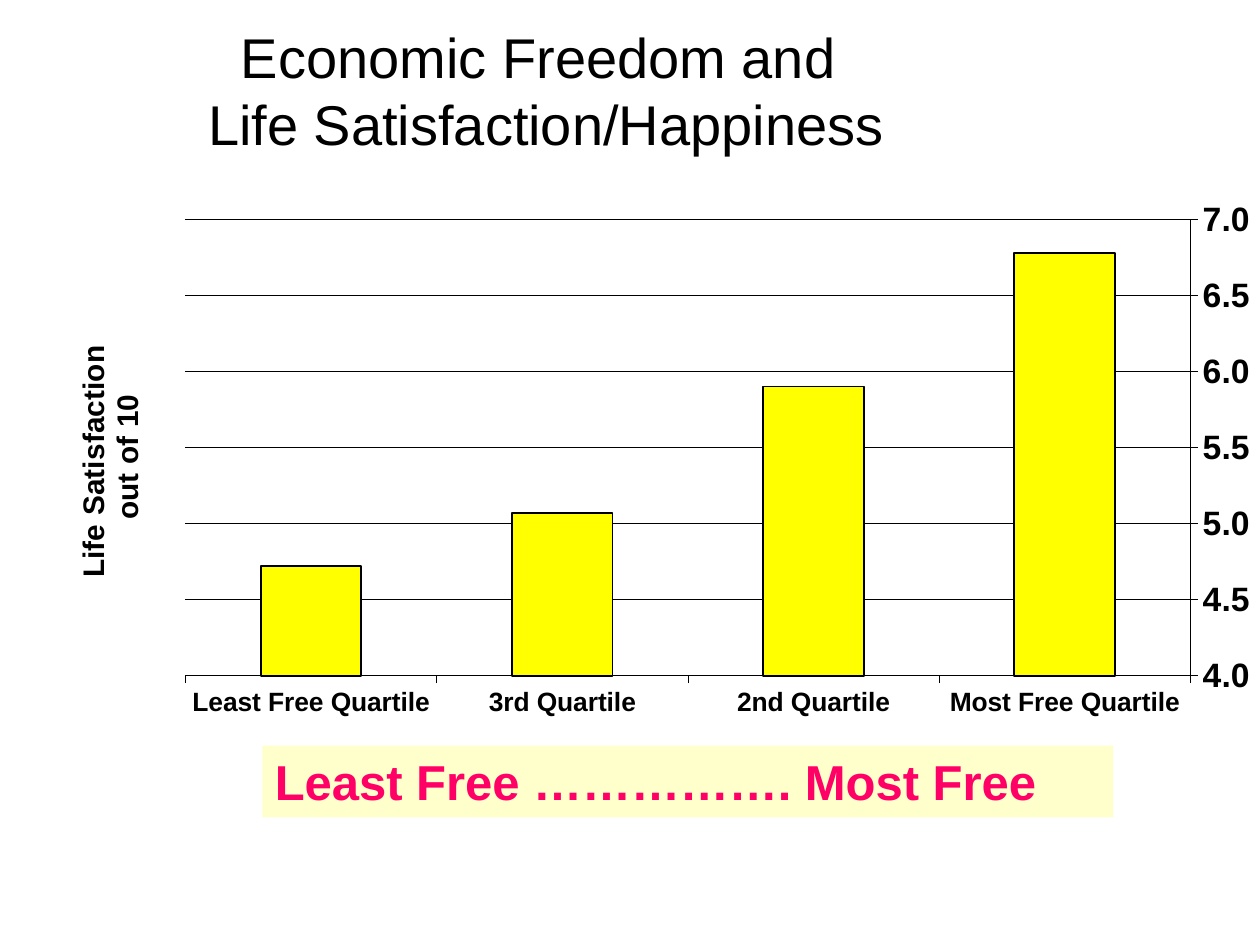
from lxml.etree import SubElement
from pptx import Presentation
from pptx.chart.data import CategoryChartData
from pptx.dml.color import RGBColor
from pptx.enum.chart import XL_CHART_TYPE, XL_TICK_LABEL_POSITION, XL_TICK_MARK
from pptx.enum.shapes import MSO_SHAPE
from pptx.enum.text import MSO_ANCHOR, PP_ALIGN
from pptx.oxml.ns import qn
from pptx.util import Cm, Pt

SATISFACTION = {
    "Most Free Quartile": 6.78,
    "2nd Quartile": 5.9,
    "3rd Quartile": 5.07,
    "Least Free Quartile": 4.72,
}


def color(value):
    return RGBColor.from_string(value)


def set_values(target, values):
    for name, value in values.items():
        setattr(target, name, value)


def style_font(font, size, bold=True, fill="000000"):
    set_values(font, {"name": "Arial", "size": Pt(size), "bold": bold})
    font.color.rgb = color(fill)


def style_line(line, width):
    line.color.rgb = color("000000")
    line.width = Pt(width)


def set_layout(parent, **values):
    layout = parent.find(qn("c:layout"))
    if layout is None:
        layout = parent.makeelement(qn("c:layout"))
        anchor = parent.find(qn("c:tx"))
        if anchor is None:
            parent.insert(0, layout)
        else:
            anchor.addnext(layout)
    for child in list(layout):
        layout.remove(child)
    manual = SubElement(layout, qn("c:manualLayout"))
    for tag, value in values.items():
        SubElement(manual, qn(f"c:{tag}")).set("val", str(value))


def add_title(slide, left, top, width, height):
    box = slide.shapes.add_textbox(Cm(left), Cm(top), Cm(width), Cm(height))
    frame = box.text_frame
    set_values(frame, {"word_wrap": True, "vertical_anchor": MSO_ANCHOR.MIDDLE})
    paragraph = frame.paragraphs[0]
    paragraph.text = "Economic Freedom and \vLife Satisfaction/Happiness"
    paragraph.alignment = PP_ALIGN.CENTER
    style_font(paragraph.font, 32, bold=False)


def add_value_title(axis):
    frame = axis.axis_title.text_frame
    frame.text = "Life Satisfaction \vout of 10"
    paragraph = frame.paragraphs[0]
    paragraph.alignment = PP_ALIGN.CENTER
    style_font(paragraph.font, 17)
    for run in paragraph.runs:
        style_font(run.font, 17)
    body = frame.paragraphs[0]._p.getparent().find(qn("a:bodyPr"))
    body.set("rot", "-5400000")
    body.set("vert", "horz")
    set_layout(axis.axis_title._element, xMode="edge", yMode="edge", x=0.04, y=0.2)


def add_satisfaction_chart(slide, left, top, width, height):
    data = CategoryChartData(number_format="0.0")
    data.categories = list(SATISFACTION)
    data.add_series("Series 1", list(SATISFACTION.values()))
    chart = slide.shapes.add_chart(
        XL_CHART_TYPE.COLUMN_CLUSTERED, Cm(left), Cm(top), Cm(width), Cm(height), data
    ).chart
    set_values(chart, {"has_legend": False, "has_title": False})
    style_font(chart.font, 19)

    plot = chart.plots[0]
    set_values(plot, {"gap_width": 150, "vary_by_categories": False})
    bars = plot.series[0].format
    bars.fill.solid()
    bars.fill.fore_color.rgb = color("FFFF00")
    style_line(bars.line, 1.06)

    for axis, size in ((chart.category_axis, 15.1), (chart.value_axis, 19.3)):
        axis.major_tick_mark = XL_TICK_MARK.OUTSIDE
        style_line(axis.format.line, 0.25)
        style_font(axis.tick_labels.font, size)
    set_values(chart.category_axis, {
        "reverse_order": True,
        "tick_label_position": XL_TICK_LABEL_POSITION.LOW,
    })
    value_axis = chart.value_axis
    set_values(value_axis, {
        "minimum_scale": 4,
        "maximum_scale": 7,
        "major_unit": 0.5,
        "has_major_gridlines": True,
    })
    set_values(value_axis.tick_labels, {
        "number_format": "0.0",
        "number_format_is_linked": False,
    })
    style_line(value_axis.major_gridlines.format.line, 0.25)
    add_value_title(value_axis)
    plot_area = chart._chartSpace.find(qn("c:chart")).find(qn("c:plotArea"))
    set_layout(plot_area, layoutTarget="inner", xMode="edge", yMode="edge",
               x=0.134, y=0.03, w=0.82, h=0.686)


def add_freedom_scale(slide, left, top, width, height):
    shape = slide.shapes.add_shape(
        MSO_SHAPE.RECTANGLE, Cm(left), Cm(top), Cm(width), Cm(height)
    )
    shape.shadow.inherit = False
    shape.fill.solid()
    shape.fill.fore_color.rgb = color("FFFFCC")
    shape.line.fill.background()
    frame = shape.text_frame
    set_values(frame, {"word_wrap": True, "vertical_anchor": MSO_ANCHOR.TOP})
    paragraph = frame.paragraphs[0]
    paragraph.text = "Least Free ……………. Most Free"
    paragraph.alignment = PP_ALIGN.LEFT
    style_font(paragraph.font, 28, fill="FF0066")


def main():
    presentation = Presentation()
    set_values(presentation, {"slide_width": Cm(25.4), "slide_height": Cm(19.05)})
    slide = presentation.slides.add_slide(presentation.slide_layouts[6])
    add_title(slide, 0.64, 0, 20.75, 3.6)
    add_satisfaction_chart(slide, 0.43, 4.02, 24.77, 13.41)
    add_freedom_scale(slide, 5.29, 15.03, 17.15, 1.45)
    presentation.save("out.pptx")


if __name__ == "__main__":
    main()
